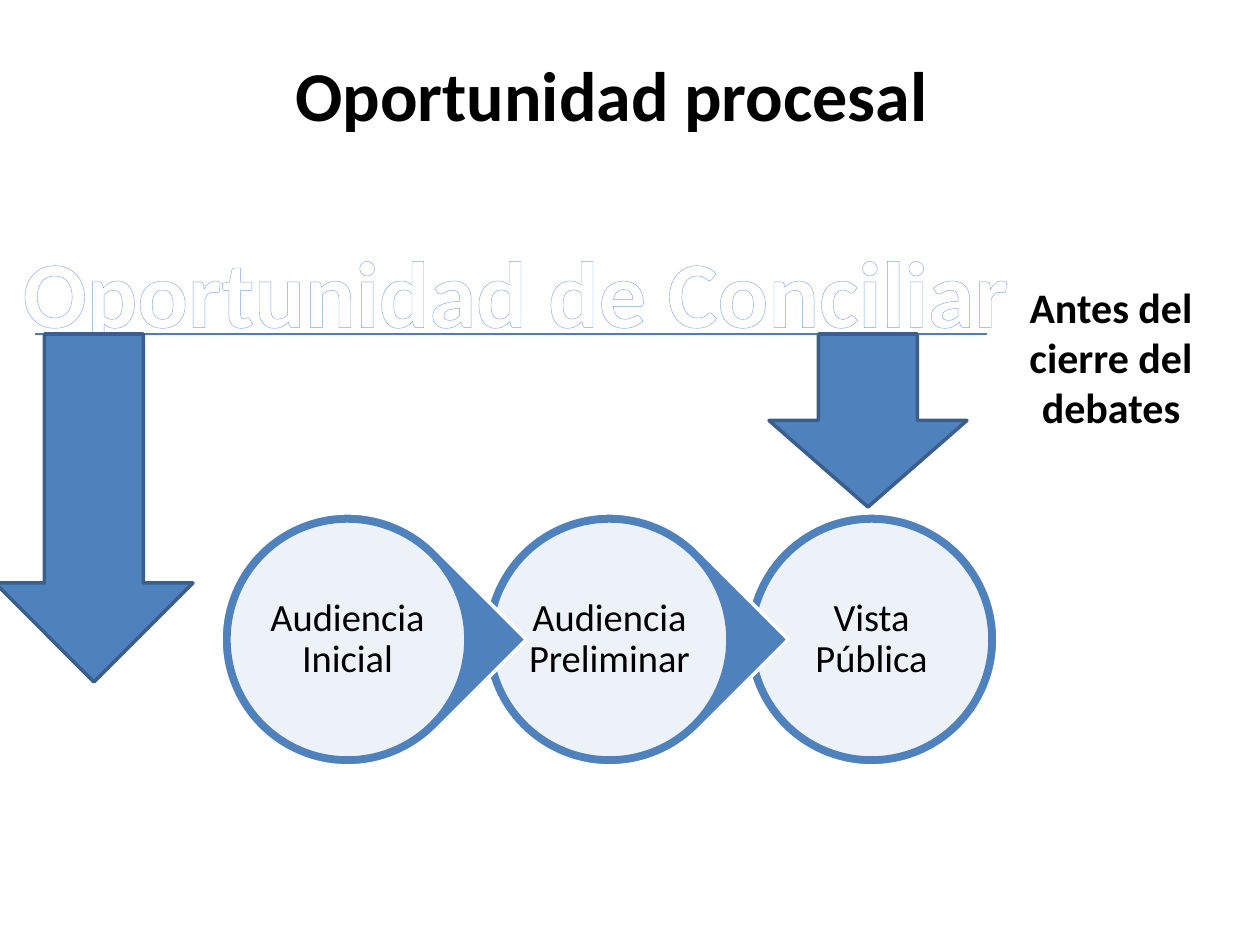
from lxml.etree import SubElement
from pptx import Presentation
from pptx.dml.color import RGBColor
from pptx.enum.shapes import MSO_CONNECTOR as Connector, MSO_SHAPE as Shape
from pptx.enum.text import MSO_ANCHOR as Anchor, PP_ALIGN as Align
from pptx.oxml.ns import qn
from pptx.util import Emu, Pt

WHITE = RGBColor(0xFF, 0xFF, 0xFF)
BLACK = RGBColor(0x00, 0x00, 0x00)
BLUE = RGBColor(0x4F, 0x81, 0xBD)
DARK_BLUE = RGBColor(0x3A, 0x5F, 0x8C)
RULE_BLUE = RGBColor(0x4B, 0x7E, 0xBC)
OUTLINE_BLUE = RGBColor(0x7E, 0xA6, 0xEA)


def px(*lengths):
    return [Emu(round(length * 914400 / 126)) for length in lengths]


class SlideBuilder:
    font = "Calibri"

    def __init__(self, page):
        self.page = page

    def shape(self, kind, area, fill, line, alpha=None, rotation=0):
        shape = self.page.shapes.add_shape(kind, *px(*area))
        shape.shadow.inherit = False
        shape.rotation = rotation
        shape.fill.solid()
        shape.fill.fore_color.rgb = fill
        if alpha is not None:
            color = shape._element.spPr.find(qn("a:solidFill"))[0]
            SubElement(color, qn("a:alpha"), val=str(alpha * 1000))
        shape.line.color.rgb = line
        shape.line.width = Pt(2)
        return shape

    def text(self, words, area, size, color=BLACK, bold=False, wrap=True):
        box = self.page.shapes.add_textbox(*px(*area))
        frame = box.text_frame
        frame.word_wrap = wrap
        frame.text = words
        para = frame.paragraphs[0]
        para.alignment = Align.CENTER
        font = para.runs[0].font
        font.name, font.size, font.bold = self.font, Pt(size), bold
        font.color.rgb = color
        return box

    def outlined_text(self, words, area, size):
        box = self.text(words, area, size, WHITE, bold=True, wrap=False)
        span = box.text_frame.paragraphs[0].runs[0]
        props = span._r.get_or_add_rPr()
        outline = SubElement(props, qn("a:ln"), w=str(int(Pt(2.5))))
        fill = SubElement(outline, qn("a:solidFill"))
        SubElement(fill, qn("a:srgbClr"), val=str(OUTLINE_BLUE))
        props.insert(0, outline)  # the outline must come before the fill

    def circle_label(self, words, area):
        box = self.text(words, area, 22)
        frame = box.text_frame
        frame.vertical_anchor = Anchor.MIDDLE
        frame.margin_left, frame.margin_top, frame.margin_right, frame.margin_bottom = px(4, 4, 4, 4)
        frame.paragraphs[0].line_spacing = 0.9

    def stage(self, words, left, top, pointed):
        """A ring, with a point to the right if another stage follows."""
        kind = Shape.TEAR if pointed else Shape.OVAL
        ring = self.shape(kind, (left, top, 253, 253), BLUE, WHITE,
                          rotation=45 if pointed else 0)
        if pointed:
            ring.adjustments[0] = 1
        self.shape(Shape.OVAL, (left + 8, top + 8, 237, 237), WHITE, BLUE, alpha=90)
        self.circle_label(words, (left + 42, top + 42, 169, 169))

    def rule(self, left, right, top):
        line = self.page.shapes.add_connector(
            Connector.STRAIGHT, *px(left, top, right, top))
        line.line.color.rgb = RULE_BLUE
        line.line.width = Pt(0.75)
        SubElement(line._element.spPr, qn("a:effectLst"))

    def down_arrow(self, left, top, height):
        self.shape(Shape.DOWN_ARROW, (left, top, 198, height), BLUE, DARK_BLUE)


def main():
    deck = Presentation()
    deck.slide_width, deck.slide_height = px(1260, 945)
    builder = SlideBuilder(deck.slides.add_slide(deck.slide_layouts[6]))

    # Title
    builder.text("Oportunidad procesal ", (54, 45, 1131, 97), 40, bold=True)

    # Stages, last one first so that each point overlaps the next ring
    stages = ["Audiencia Inicial", "Audiencia Preliminar", "Vista Pública"]
    last = len(stages) - 1
    for index in range(last, -1, -1):
        builder.stage(stages[index], 221 + 262 * index, 513, index < last)

    # Window for conciliation
    rule_top = 334
    builder.rule(35, 987, rule_top)
    builder.outlined_text("Oportunidad de Conciliar", (5, 227, 1022, 127), 54)
    builder.down_arrow(-5, rule_top, 348)
    builder.down_arrow(769, rule_top, 173)

    # Time limit
    builder.text("Antes del cierre del debates", (1007, 275, 208, 165), 24, bold=True)

    deck.save("out.pptx")


if __name__ == "__main__":
    main()
